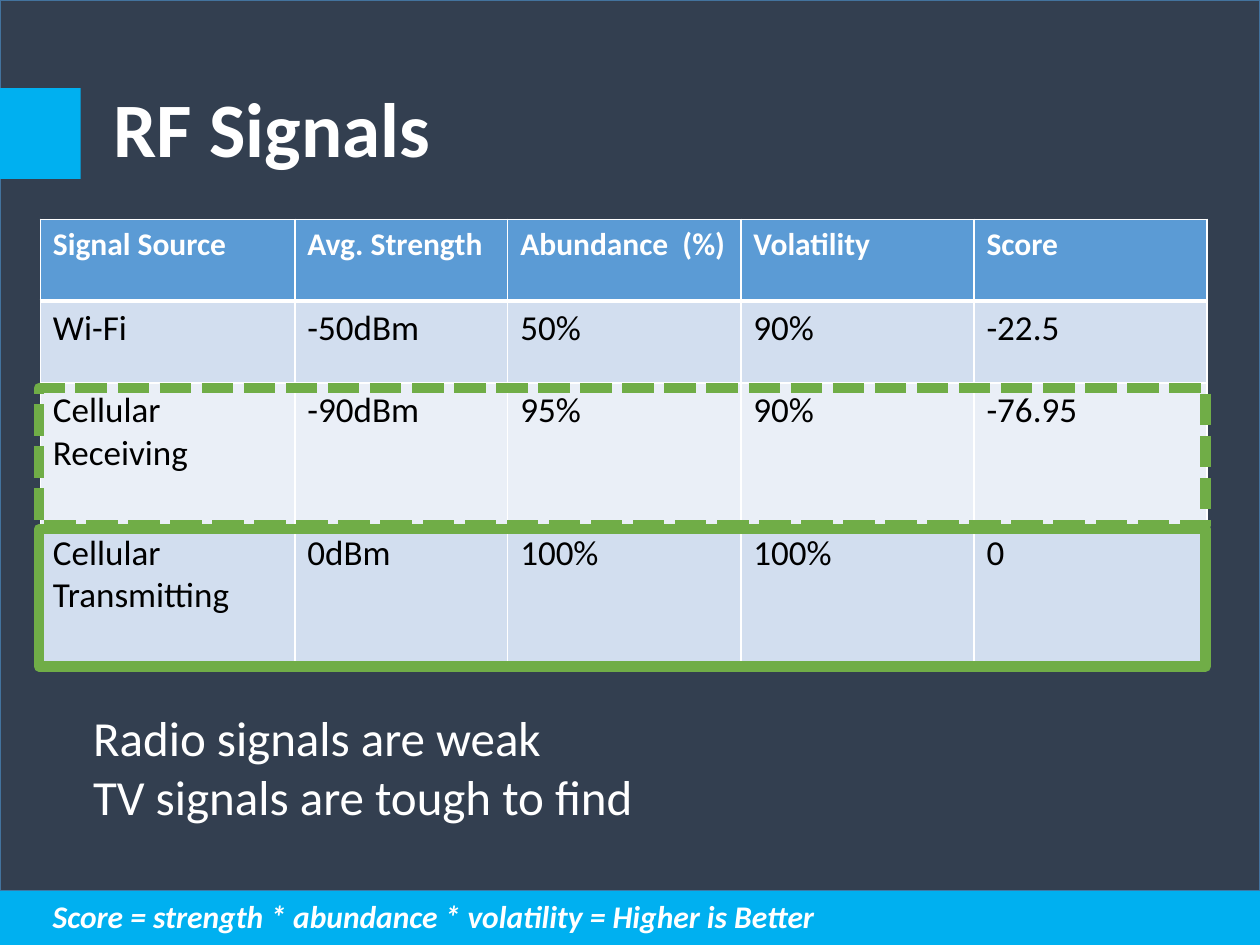
from lxml import etree
from pptx import Presentation
from pptx.dml.color import RGBColor
from pptx.enum import dml, shapes, text
from pptx.oxml.ns import qn
from pptx.util import Inches, Pt

FONT = "Calibri"
WHITE = RGBColor(0xFF, 0xFF, 0xFF)
BLACK = RGBColor(0, 0, 0)
NAVY = RGBColor(0x33, 0x3F, 0x50)
NAVY_EDGE = RGBColor(0x43, 0x73, 0x9E)
CYAN = RGBColor(0x00, 0xB0, 0xF0)
GREEN = RGBColor(0x70, 0xAD, 0x47)
HEADER = RGBColor(0x5B, 0x9B, 0xD5)
BANDS = (RGBColor(0xD2, 0xDE, 0xEF), RGBColor(0xEA, 0xEF, 0xF7))

COL_WIDTHS = (2.02, 1.69, 1.85, 1.85, 1.85)
ROW_HEIGHTS = (0.65, 0.65, 1.13, 1.13)
ROWS = (
    ("Signal Source", "Avg. Strength", "Abundance  (%)", "Volatility", "Score"),
    ("Wi-Fi", "-50dBm", "50%", "90%", "-22.5"),
    ("Cellular Receiving", "-90dBm", "95%", "90%", "-76.95"),
    ("Cellular Transmitting", "0dBm", "100%", "100%", "0"),
)


def add_run(p, words, size, color, bold=False, italic=False):
    r = p.add_run()
    r.text = words
    f = r.font
    f.name, f.size, f.bold, f.italic = FONT, Pt(size), bold, italic
    f.color.rgb = color


def add_rect(s, box, fill=None, line=None, width=1, dash=None):
    sp = s.shapes.add_shape(shapes.MSO_SHAPE.RECTANGLE, *map(Inches, box))
    sp.shadow.inherit = False
    if fill is None:
        sp.fill.background()
    else:
        sp.fill.solid()
        sp.fill.fore_color.rgb = fill
    if line is None:
        sp.line.fill.background()
    else:
        sp.line.color.rgb = line
        sp.line.width = Pt(width)
        sp.line.dash_style = dash
    return sp


def add_lines(s, box, lines, size, **style):
    """Add a text box with one paragraph for each line."""
    tf = s.shapes.add_textbox(*map(Inches, box)).text_frame
    tf.word_wrap = False
    tf.auto_size = text.MSO_AUTO_SIZE.SHAPE_TO_FIT_TEXT
    for i, words in enumerate(lines):
        p = tf.add_paragraph() if i else tf.paragraphs[0]
        add_run(p, words, size, WHITE, **style)


def set_borders(cell, bottom):
    tc_pr = cell._tc.get_or_add_tcPr()
    for i, (side, width) in enumerate(
        (("lnL", 1), ("lnR", 1), ("lnT", 1), ("lnB", bottom))
    ):
        ln = etree.Element(qn("a:" + side), w=str(Pt(width)))
        fill = etree.SubElement(ln, qn("a:solidFill"))
        etree.SubElement(fill, qn("a:srgbClr"), val=str(WHITE))
        tc_pr.insert(i, ln)


def add_title(s, box, words):
    left, top, width, height = box
    title = s.shapes.title
    title.left, title.top = Inches(left), Inches(top)
    title.width, title.height = Inches(width), Inches(height)
    tf = title.text_frame
    tf.vertical_anchor = text.MSO_ANCHOR.MIDDLE
    p = tf.paragraphs[0]
    p.alignment = text.PP_ALIGN.LEFT
    p.line_spacing = 0.9
    add_run(p, words, 44, WHITE, bold=True)
    add_rect(s, (0, top + 0.37, 0.64, 0.72), CYAN)


def add_signal_table(s, left, top):
    box = (left, top, sum(COL_WIDTHS), sum(ROW_HEIGHTS))
    table = s.shapes.add_table(
        len(ROWS), len(COL_WIDTHS), *map(Inches, box)
    ).table
    for col, width in zip(table.columns, COL_WIDTHS):
        col.width = Inches(width)
    for i, (row, height) in enumerate(zip(table.rows, ROW_HEIGHTS)):
        row.height = Inches(height)
        head = i == 0
        for cell, words in zip(row.cells, ROWS[i]):
            cell.fill.solid()
            cell.fill.fore_color.rgb = HEADER if head else BANDS[(i - 1) % 2]
            set_borders(cell, 3 if head or i == 0 else 1)
            add_run(cell.text_frame.paragraphs[0], words,
                    18 if head else 20, WHITE if head else BLACK, bold=head)


def add_row_frames(s, left, top):
    """Outline the two cellular rows: dashed, then solid."""
    for i, dash in ((1, None), (0, dml.MSO_LINE.SQUARE_DOT)):
        sp = add_rect(s, (left, top + i * 1.12, 9.26, 1.09),
                      line=GREEN, width=6, dash=dash)
        if dash:
            sp.line._ln.find(qn("a:prstDash")).set("val", "sysDash")


def add_footer(s, top):
    add_rect(s, (0, top, 10, 0.43), CYAN)
    add_lines(s, (0.32, top, 6.45, 0.4),
              ["Score = strength * abundance * volatility = Higher is Better"],
              18, bold=True, italic=True)


def main():
    prs = Presentation()
    prs.slide_width, prs.slide_height = Inches(10), Inches(7.5)
    s = prs.slides.add_slide(prs.slide_layouts[5])
    backdrop = add_rect(s, (0, 0, 10, 7.07), NAVY, NAVY_EDGE)
    s.shapes.title._element.addprevious(backdrop._element)
    add_title(s, (0.8, 0.33, 10.67, 1.45), "RF Signals")
    add_signal_table(s, 0.32, 1.74)
    add_footer(s, 7.07)
    add_lines(s, (0.64, 5.57, 4.62, 1.04),
              ["Radio signals are weak", "TV signals are tough to find"], 28)
    add_row_frames(s, 0.31, 3.08)
    prs.save("out.pptx")


if __name__ == "__main__":
    main()
